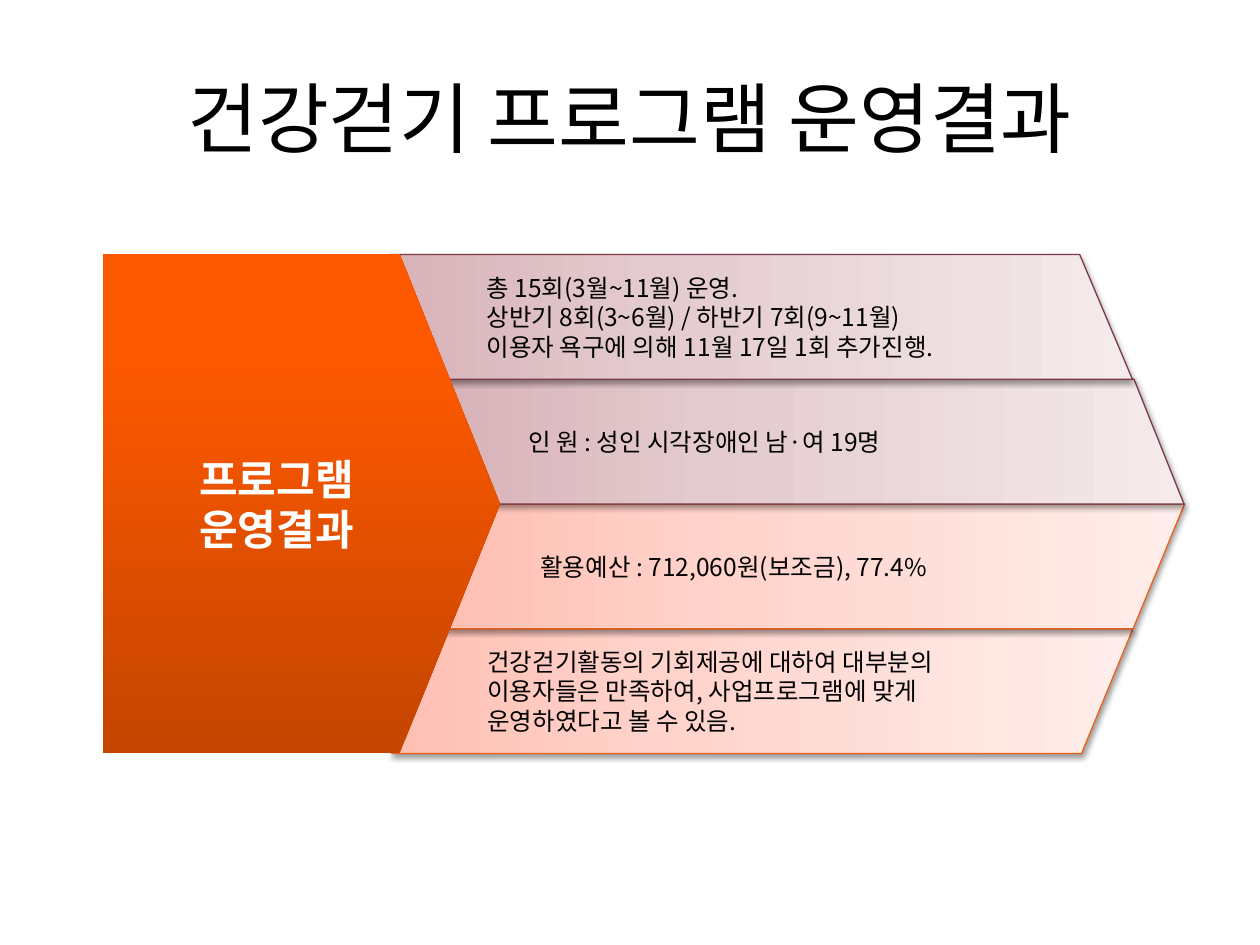
from lxml.etree import SubElement
from pptx import Presentation
from pptx.dml.color import RGBColor
from pptx.enum.shapes import MSO_SHAPE
from pptx.enum.text import MSO_ANCHOR, PP_ALIGN
from pptx.oxml import parse_xml
from pptx.oxml.ns import nsdecls, qn
from pptx.util import Cm, Pt

FONT = "Noto Sans CJK KR"

# Content; "\v" is a line break inside a paragraph
TITLE = "건강걷기 프로그램 운영결과"
HEADING = "프로그램\n운영결과"
RESULTS = [
    "총 15회(3월~11월) 운영.\n상반기 8회(3~6월) / 하반기 7회(9~11월)\v"
    "이용자 욕구에 의해 11월 17일 1회 추가진행.",
    "인 원 : 성인 시각장애인 남·여 19명",
    "활용예산 : 712,060원(보조금), 77.4%",
    "건강걷기활동의 기회제공에 대하여 대부분의 이용자들은 만족하여, "
    "사업프로그램에 맞게 운영하였다고 볼 수 있음.",
]

# Formats
ROSE = {"stops": [(0, "D8B3B9"), (35, "E3CACE"), (100, "F5EBEC")],
        "angle": 180, "line": "7C3947", "flip": True}
CORAL = {"stops": [(0, "FFBFB3"), (35, "FFD2CA"), (100, "FFEEEB")],
         "angle": 0, "line": "EB6015", "flip": False}
ORANGE = [(0, "C44500"), (80, "FE5900"), (100, "FF5A00")]
# left, width, slant, left inset, right inset, line pitch, format
BANDS = [
    (7.87, 14.96, 0.423, 0.25, 0.3, 16.8, ROSE),
    (8.99, 14.88, 0.401, 0, 0.25, None, ROSE),
    (8.97, 14.91, 0.412, 0.25, 0.25, None, CORAL),
    (7.9, 14.94, 0.412, 0.25, 0.25, 16.8, CORAL),
]
LEFT, TOP, HEAD_W, HEAD_H = 2.08, 5.13, 8, 10.06
ROW_H = HEAD_H / len(BANDS)


def rgb(value):
    return RGBColor.from_string(value)


def write(s, text, size, color, align, pitch=None, bold=False, **frame):
    tf = s.text_frame
    frame = {"word_wrap": True, "vertical_anchor": MSO_ANCHOR.MIDDLE, **frame}
    for name, value in frame.items():
        setattr(tf, name, value)
    tf.text = text
    for p in tf.paragraphs:
        p.alignment = align
        if pitch:
            p.line_spacing = Pt(pitch)
        for r in p.runs:
            for name, value in {"name": FONT, "size": Pt(size), "bold": bold}.items():
                setattr(r.font, name, value)
            r.font.color.rgb = rgb(color)
            SubElement(r.font._element, qn("a:ea"), typeface=FONT)


def add_gradient_shape(shapes, kind, box, adjust, stops, angle):
    s = shapes.add_shape(kind, *(Cm(v) for v in box))
    s.adjustments[0] = adjust
    s.shadow.inherit = False
    s.line.fill.background()
    marks = "".join(f'<a:gs pos="{pos * 1000}"><a:srgbClr val="{c}"/></a:gs>'
                    for pos, c in stops)
    s._element.spPr.insert(2, parse_xml(
        f'<a:gradFill {nsdecls("a")} rotWithShape="1"><a:gsLst>{marks}</a:gsLst>'
        f'<a:lin ang="{angle * 60000}" scaled="0"/></a:gradFill>'))
    return s


def add_shadow(s):
    effects = s._element.spPr.find(qn("a:effectLst"))
    effects.append(parse_xml(
        f'<a:outerShdw {nsdecls("a")} blurRad="{Pt(3.1)}" dist="{Pt(1.6)}" '
        'dir="5400000" rotWithShape="0"><a:srgbClr val="000000">'
        '<a:alpha val="38000"/></a:srgbClr></a:outerShdw>'))


prs = Presentation()
prs.slide_width, prs.slide_height = Cm(25.4), Cm(19.05)
slide = prs.slides.add_slide(prs.slide_layouts[6])

# Title
title = slide.shapes.add_textbox(Cm(1.27), Cm(0.76), Cm(22.86), Cm(3.18))
write(title, TITLE, 44, "000000", PP_ALIGN.CENTER)

# Result bands, lowest one at the back
diagram = slide.shapes.add_group_shape().shapes
for i in reversed(range(len(BANDS))):
    left, width, slant, inset_l, inset_r, pitch, style = BANDS[i]
    s = add_gradient_shape(diagram, MSO_SHAPE.PARALLELOGRAM,
                           (left, TOP + i * ROW_H, width, ROW_H), slant,
                           style["stops"], style["angle"])
    s.line.color.rgb = rgb(style["line"])
    s.line.width = Pt(0.75)
    add_shadow(s)
    if style["flip"]:
        s._element.spPr.find(qn("a:xfrm")).set("flipH", "1")
    write(s, RESULTS[i], 14, "000000", PP_ALIGN.LEFT, pitch,
          word_wrap=not style["flip"],
          margin_left=Cm(inset_l), margin_right=Cm(inset_r))

# Heading arrow in front of the bands
arrow = add_gradient_shape(diagram, MSO_SHAPE.PENTAGON,
                           (LEFT, TOP, HEAD_W, HEAD_H), 0.253, ORANGE, 270)
write(arrow, HEADING, 24, "FFFFFF", PP_ALIGN.CENTER, pitch=28.6, bold=True)

prs.save("out.pptx")
